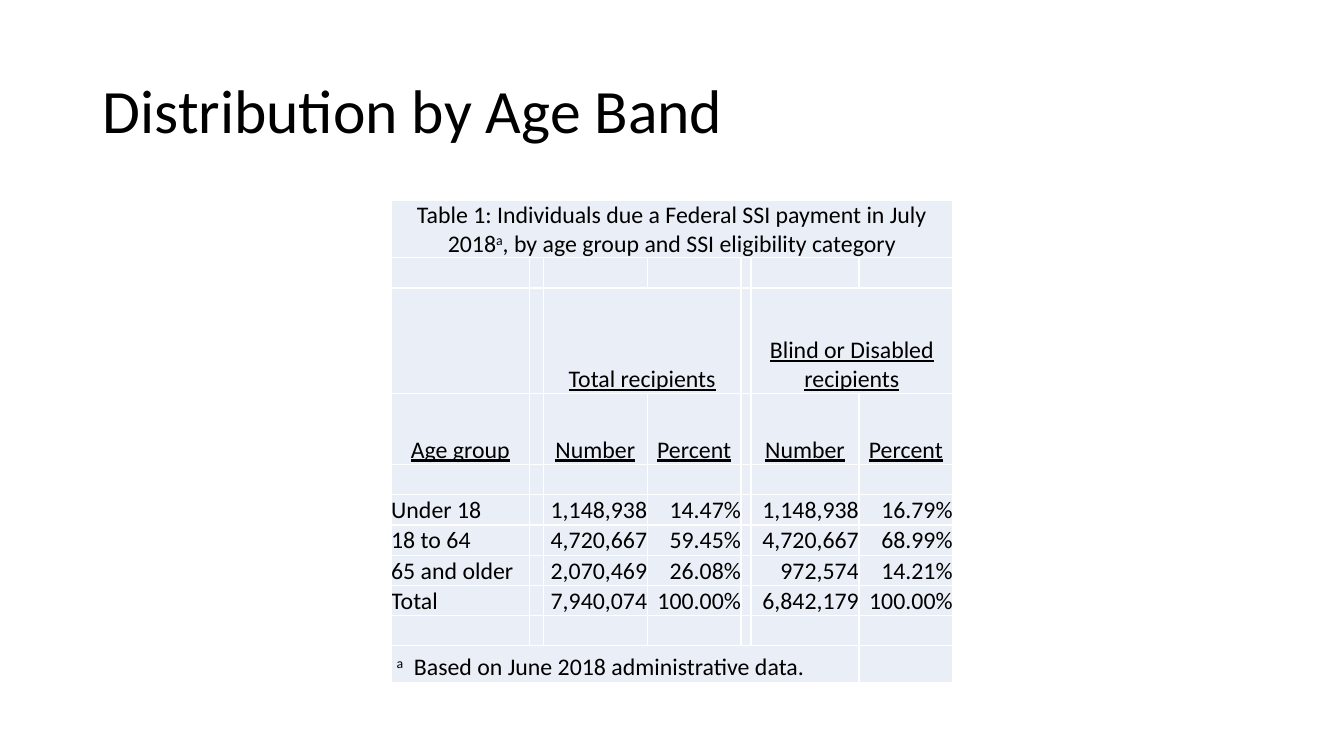
from dataclasses import dataclass

from lxml.etree import SubElement
from pptx import Presentation
from pptx.dml.color import RGBColor
from pptx.enum.text import MSO_ANCHOR, PP_ALIGN
from pptx.oxml.ns import qn
from pptx.util import Inches, Pt


@dataclass(frozen=True)
class Theme:
    """Colours, typeface and type sizes of the slide."""
    font: str = "Calibri"
    ink: str = "000000"
    band: str = "EAEFF7"
    rule: str = "FFFFFF"
    title_size: int = 44
    table_size: int = 17
    rule_width: int = 1


COLUMN_WIDTHS = (1.37, 0.14, 1.03, 0.93, 0.1, 1.07, 0.93)
ROW_HEIGHTS = (0.56, 0.3, 1.05, 0.7, 0.3, 0.3, 0.3, 0.3, 0.3, 0.3, 0.36)
LABEL_COLUMNS = (0, 2, 3, 5, 6)
FIRST_AGE_ROW = 5
HEADINGS = ("Age group", "Number", "Percent", "Number", "Percent")
AGE_BANDS = (
    ("Under 18", "1,148,938", "14.47%", "1,148,938", "16.79%"),
    ("18 to 64", "4,720,667", "59.45%", "4,720,667", "68.99%"),
    ("65 and older", "2,070,469", "26.08%", "972,574", "14.21%"),
    ("Total", "7,940,074", "100.00%", "6,842,179", "100.00%"),
)
CAPTION = ("Table 1: Individuals due a Federal SSI payment in July 2018", "a",
           ", by age group and SSI eligibility category")
FOOTNOTE = (" ", "a", "  Based on June 2018 administrative data.")


class SlideBuilder:
    """Draws themed elements on the current slide."""

    def __init__(self, slide, theme):
        self.slide = slide
        self.theme = theme

    def style_run(self, run, size, underline=False):
        run.font.name = self.theme.font
        run.font.size = Pt(size)
        run.font.color.rgb = RGBColor.from_string(self.theme.ink)
        if underline:
            run.font.underline = True

    def title(self, text, left, top, width, height):
        heading = self.slide.shapes.add_textbox(
            Inches(left), Inches(top), Inches(width), Inches(height))
        frame = heading.text_frame
        frame.word_wrap = True
        frame.vertical_anchor = MSO_ANCHOR.MIDDLE
        frame.text = text
        frame.paragraphs[0].line_spacing = 0.9
        self.style_run(frame.paragraphs[0].runs[0], self.theme.title_size)

    def table(self, left, top, widths, heights):
        frame = self.slide.shapes.add_table(
            len(heights), len(widths), Inches(left), Inches(top),
            Inches(sum(widths)), Inches(sum(heights)))
        grid = frame.table
        grid.first_row = grid.horz_banding = False
        for column, width in zip(grid.columns, widths):
            column.width = Inches(width)
        for row, height in zip(grid.rows, heights):
            row.height = Inches(height)
        for cell in grid.iter_cells():
            self.plain_cell(cell)
        return grid

    def plain_cell(self, cell):
        cell.margin_left = cell.margin_right = 0
        cell.margin_top = cell.margin_bottom = 0
        cell.vertical_anchor = MSO_ANCHOR.BOTTOM
        properties = cell._tc.get_or_add_tcPr()
        for side in ("lnL", "lnR", "lnT", "lnB"):
            line = SubElement(properties, qn(f"a:{side}"),
                              w=str(Pt(self.theme.rule_width)))
            paint = SubElement(line, qn("a:solidFill"))
            SubElement(paint, qn("a:srgbClr"), val=self.theme.rule)
        cell.fill.solid()
        cell.fill.fore_color.rgb = RGBColor.from_string(self.theme.band)
        SubElement(cell.text_frame.paragraphs[0]._p, qn("a:endParaRPr"),
                   sz=str(self.theme.table_size * 100))

    def label(self, cell, text, align, underline=False):
        cell.text_frame.text = text
        paragraph = cell.text_frame.paragraphs[0]
        paragraph.alignment = align
        self.style_run(paragraph.runs[0], self.theme.table_size, underline)

    def marked_label(self, cell, parts, align):
        before, mark, after = parts
        self.label(cell, before, align)
        paragraph = cell.text_frame.paragraphs[0]
        for text in (mark, after):
            run = paragraph.add_run()
            run.text = text
            self.style_run(run, self.theme.table_size)
            if text == mark:
                run._r.get_or_add_rPr().set("baseline", "30000")


def main():
    deck = Presentation()
    deck.slide_width = Inches(13.33)
    deck.slide_height = Inches(7.5)
    builder = SlideBuilder(deck.slides.add_slide(deck.slide_layouts[6]), Theme())

    builder.title("Distribution by Age Band", 0.92, 0.4, 11.5, 1.45)
    ages = builder.table(3.88, 1.99, COLUMN_WIDTHS, ROW_HEIGHTS)
    footnote_row = len(ROW_HEIGHTS) - 1
    for row, first, last in ((0, 0, 6), (2, 2, 3), (2, 5, 6), (footnote_row, 0, 5)):
        ages.cell(row, first).merge(ages.cell(row, last))

    builder.marked_label(ages.cell(0, 0), CAPTION, PP_ALIGN.CENTER)
    builder.marked_label(ages.cell(footnote_row, 0), FOOTNOTE, PP_ALIGN.LEFT)
    for column, group in ((2, "Total recipients"), (5, "Blind or Disabled recipients")):
        builder.label(ages.cell(2, column), group, PP_ALIGN.CENTER, underline=True)
    for column, heading in zip(LABEL_COLUMNS, HEADINGS):
        builder.label(ages.cell(3, column), heading, PP_ALIGN.CENTER, underline=True)
    for row, band in enumerate(AGE_BANDS, FIRST_AGE_ROW):
        for column, value in zip(LABEL_COLUMNS, band):
            align = PP_ALIGN.RIGHT if column else PP_ALIGN.LEFT
            builder.label(ages.cell(row, column), value, align)

    deck.save("out.pptx")


if __name__ == "__main__":
    main()
